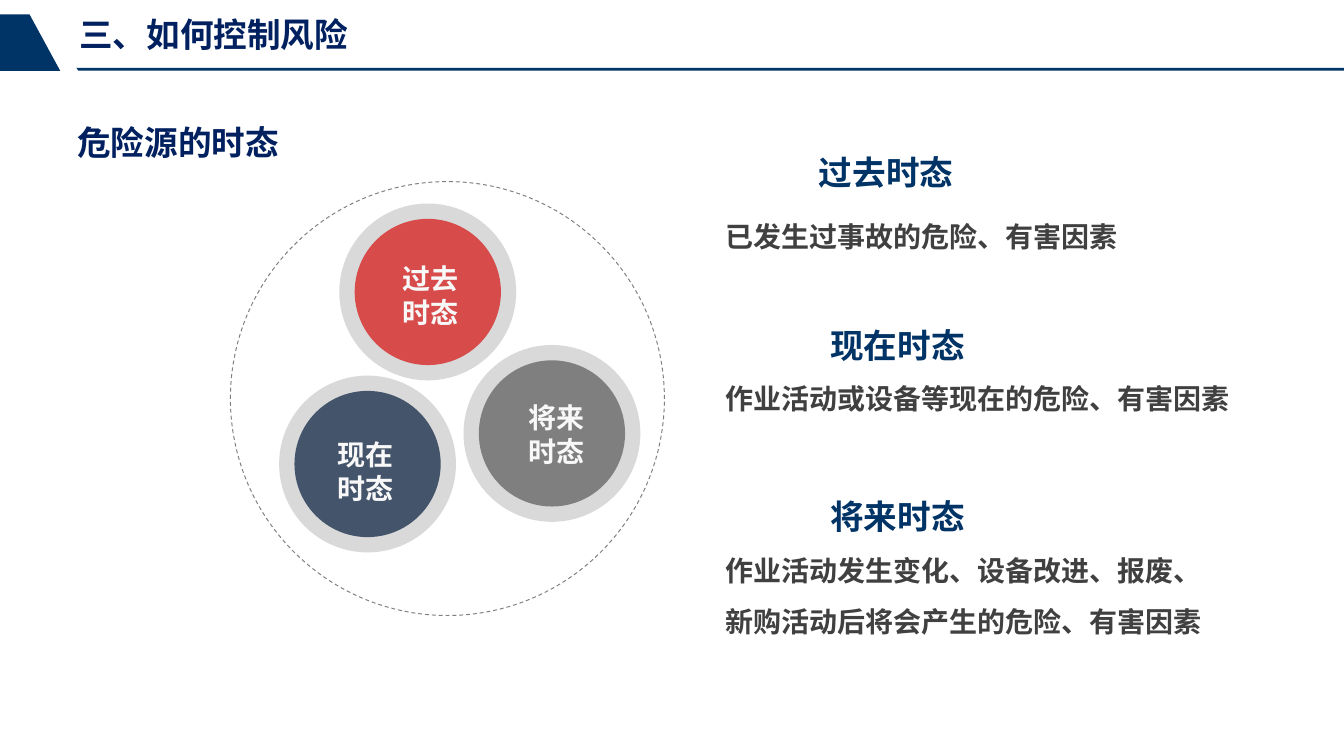
from dataclasses import dataclass

from lxml.etree import SubElement
from pptx import Presentation
from pptx.dml.color import RGBColor
from pptx.enum.dml import MSO_LINE
from pptx.enum.shapes import MSO_SHAPE
from pptx.enum.text import MSO_ANCHOR, MSO_AUTO_SIZE as AUTO, PP_ALIGN as ALIGN
from pptx.oxml.ns import qn
from pptx.shapes.autoshape import Shape
from pptx.util import Inches, Pt

NAVY = RGBColor(0x00, 0x33, 0x66)
TITLE_BLUE = RGBColor(0x00, 0x20, 0x60)
BODY_GREY = RGBColor(0x40, 0x40, 0x40)
LABEL_WHITE = RGBColor(0xF8, 0xF8, 0xF8)
RING_GREY = RGBColor(0xD9, 0xD9, 0xD9)
MID_GREY = RGBColor(0x7F, 0x7F, 0x7F)
SLATE = RGBColor(0x44, 0x54, 0x6A)
RED = RGBColor(0xD7, 0x4B, 0x4B)

FONT = "Arial"
LARGE, MEDIUM = 25.3, 21.1
ORBIT, RING, DISC = 32.29, 13.16, 10.88
LABEL_WIDTH, LABEL_HEIGHT = 5.62, 10.24
HEADING_LEFT, HEADING_HEIGHT, BODY_LEFT = 52.42, 6.7, 53.27
NO_MARGINS = dict.fromkeys(("margin_left", "margin_top", "margin_right", "margin_bottom"), 0)

deck = Presentation()
deck.slide_width, deck.slide_height = Inches(14.06), Inches(7.91)
slide = deck.slides.add_slide(deck.slide_layouts[6])


@dataclass(frozen=True)
class Box:
    """Area in percent of the slide's width and height."""
    left: float
    top: float
    width: float
    height: float


@dataclass(frozen=True)
class Style:
    """Look of a block of text."""
    size: float
    color: RGBColor
    paragraph: dict
    frame: dict


@dataclass(frozen=True)
class Bubble:
    """Ringed disc for one tense, with the centre of its label."""
    lines: tuple[str, ...]
    x: float
    y: float
    label_x: float
    label_y: float
    color: RGBColor


@dataclass(frozen=True)
class Entry:
    """Heading and explanation of one tense."""
    heading: str
    heading_top: float
    heading_width: float
    body: str
    body_top: float
    body_width: float
    body_height: float


TITLE = Style(LARGE, TITLE_BLUE, {}, {"word_wrap": True, **NO_MARGINS})
HEADING = Style(LARGE, NAVY, {"alignment": ALIGN.CENTER}, {"word_wrap": True})
BODY = Style(MEDIUM, BODY_GREY, {"line_spacing": 1.5}, {"word_wrap": True})
LABEL = Style(MEDIUM, LABEL_WHITE, {"alignment": ALIGN.CENTER}, {"word_wrap": False})

TITLES = {
    "三、如何控制风险": Box(5.9, 1.9, 32.29, 5.44),
    "危险源的时态": Box(5.76, 16.18, 32.29, 5.44),
}
BUBBLES = [
    Bubble(("现在", "时态"), 27.35, 61.38, 27.2, 62.39, SLATE),
    Bubble(("将来", "时态"), 41.07, 57.33, 41.43, 57.46, MID_GREY),
    Bubble(("过去", "时态"), 31.83, 38.62, 32.04, 39.13, RED),
]
ENTRIES = [
    Entry("过去时态", 19.47, 27.03, "已发生过事故的危险、有害因素", 26.17, 32.72, 7.21),
    Entry("现在时态", 42.35, 28.73, "作业活动或设备等现在的危险、有害因素", 47.66, 41.68, 7.21),
    Entry("将来时态", 64.98, 28.73,
          "作业活动发生变化、设备改进、报废、新购活动后将会产生的危险、有害因素",
          70.42, 37.98, 13.91),
]
HEADER_OUTLINES = [
    [(5.69, 8.98), (100, 8.98), (100, 9.36), (5.83, 9.36)],
    [(2.2, 1.9), (4.48, 9.36), (0, 9.36), (0, 1.9)],
]


def across(share: float) -> int:
    """Turn a percentage of the slide's width into a length."""
    return round(deck.slide_width * share / 100)


def down(share: float) -> int:
    """Turn a percentage of the slide's height into a length."""
    return round(deck.slide_height * share / 100)


def apply(target: object, formats: dict) -> None:
    """Set every format value on the target."""
    for name, value in formats.items():
        setattr(target, name, value)


def paint(shape: Shape, color: RGBColor) -> None:
    """Give the shape a flat fill without outline or shadow."""
    shape.shadow.inherit = False
    shape.fill.solid()
    shape.fill.fore_color.rgb = color
    shape.line.fill.background()


def add_outline(points: list[tuple[float, float]]) -> None:
    """Draw a navy polygon of the header."""
    corners = [(across(x), down(y)) for x, y in points]
    builder = slide.shapes.build_freeform(*corners[0])
    builder.add_line_segments(corners[1:], close=True)
    paint(builder.convert_to_shape(), NAVY)


def add_circle(x: float, y: float, diameter: float) -> Shape:
    """Add a circle around a centre, its diameter a share of the width."""
    size = across(diameter)
    return slide.shapes.add_shape(
        MSO_SHAPE.OVAL, across(x) - size // 2, down(y) - size // 2, size, size)


def add_text(lines: tuple[str, ...], box: Box, style: Style) -> None:
    """Add a text box with one paragraph per line."""
    frame = slide.shapes.add_textbox(
        across(box.left), down(box.top), across(box.width), down(box.height)).text_frame
    apply(frame, {"auto_size": AUTO.SHAPE_TO_FIT_TEXT, "vertical_anchor": MSO_ANCHOR.TOP,
                  **style.frame})
    for index, line in enumerate(lines):
        paragraph = frame.add_paragraph() if index else frame.paragraphs[0]
        apply(paragraph, style.paragraph)
        run = paragraph.add_run()
        run.text = line
        apply(run.font, {"name": FONT, "size": Pt(style.size), "bold": True})
        run.font.color.rgb = style.color
        SubElement(run.font._element, qn("a:ea"), typeface=FONT)


def add_bubble(bubble: Bubble) -> None:
    """Draw a ring, its disc and the label."""
    for diameter, color in ((RING, RING_GREY), (DISC, bubble.color)):
        paint(add_circle(bubble.x, bubble.y, diameter), color)
    label = Box(bubble.label_x - LABEL_WIDTH / 2, bubble.label_y - LABEL_HEIGHT / 2,
                LABEL_WIDTH, LABEL_HEIGHT)
    add_text(bubble.lines, label, LABEL)


def add_entry(entry: Entry) -> None:
    """Write a heading and the explanation below it."""
    add_text((entry.heading,),
             Box(HEADING_LEFT, entry.heading_top, entry.heading_width, HEADING_HEIGHT), HEADING)
    add_text((entry.body,),
             Box(BODY_LEFT, entry.body_top, entry.body_width, entry.body_height), BODY)


def main() -> None:
    """Build the slide and save it."""
    for points in HEADER_OUTLINES:
        add_outline(points)
    for title, box in TITLES.items():
        add_text((title,), box, TITLE)
    orbit = add_circle(33.29, 52.72, ORBIT)
    orbit.shadow.inherit = False
    orbit.fill.background()
    orbit.line.color.rgb = MID_GREY
    apply(orbit.line, {"width": Pt(0.75), "dash_style": MSO_LINE.DASH})
    for bubble in BUBBLES:
        add_bubble(bubble)
    for entry in ENTRIES:
        add_entry(entry)
    deck.save("out.pptx")


if __name__ == "__main__":
    main()
